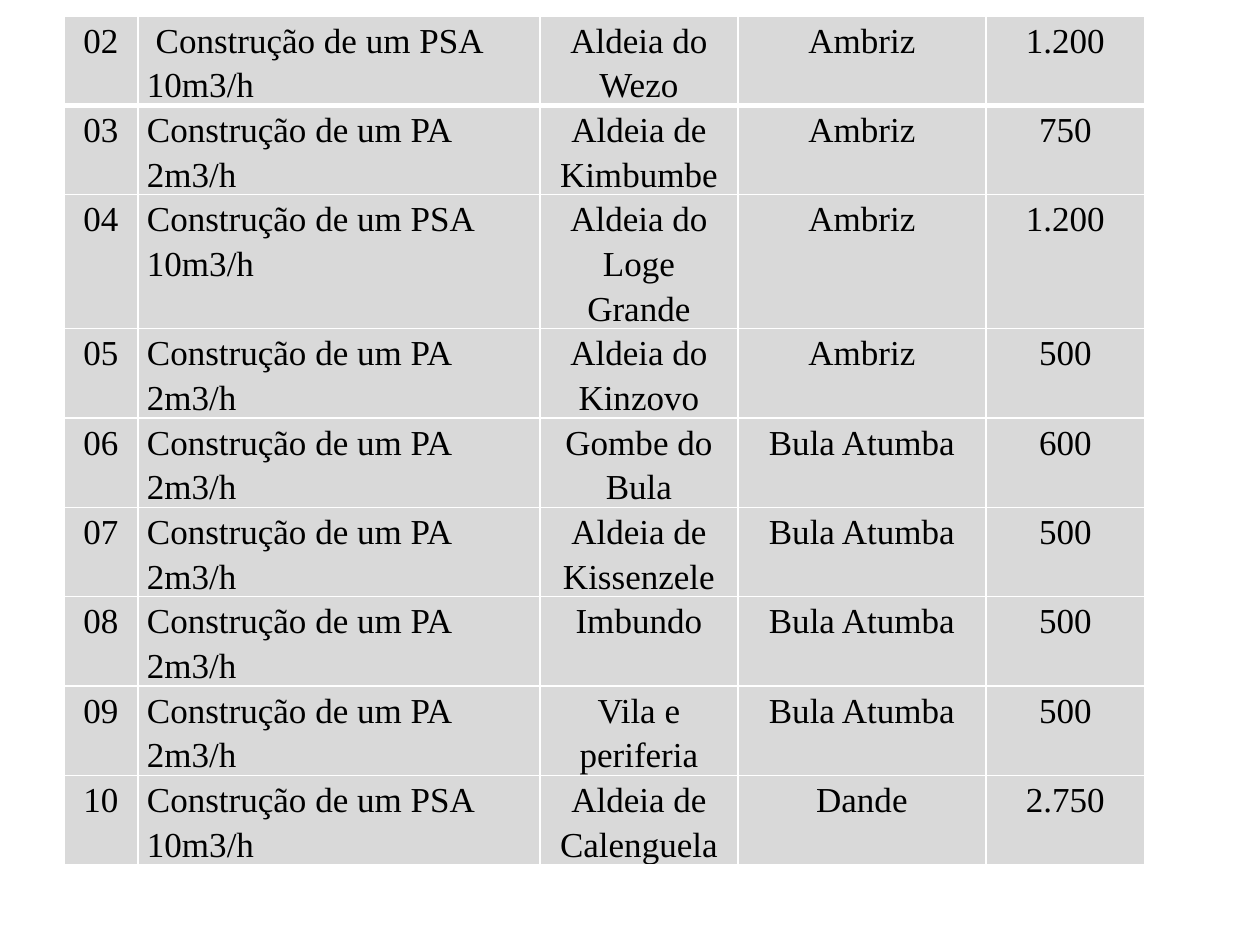
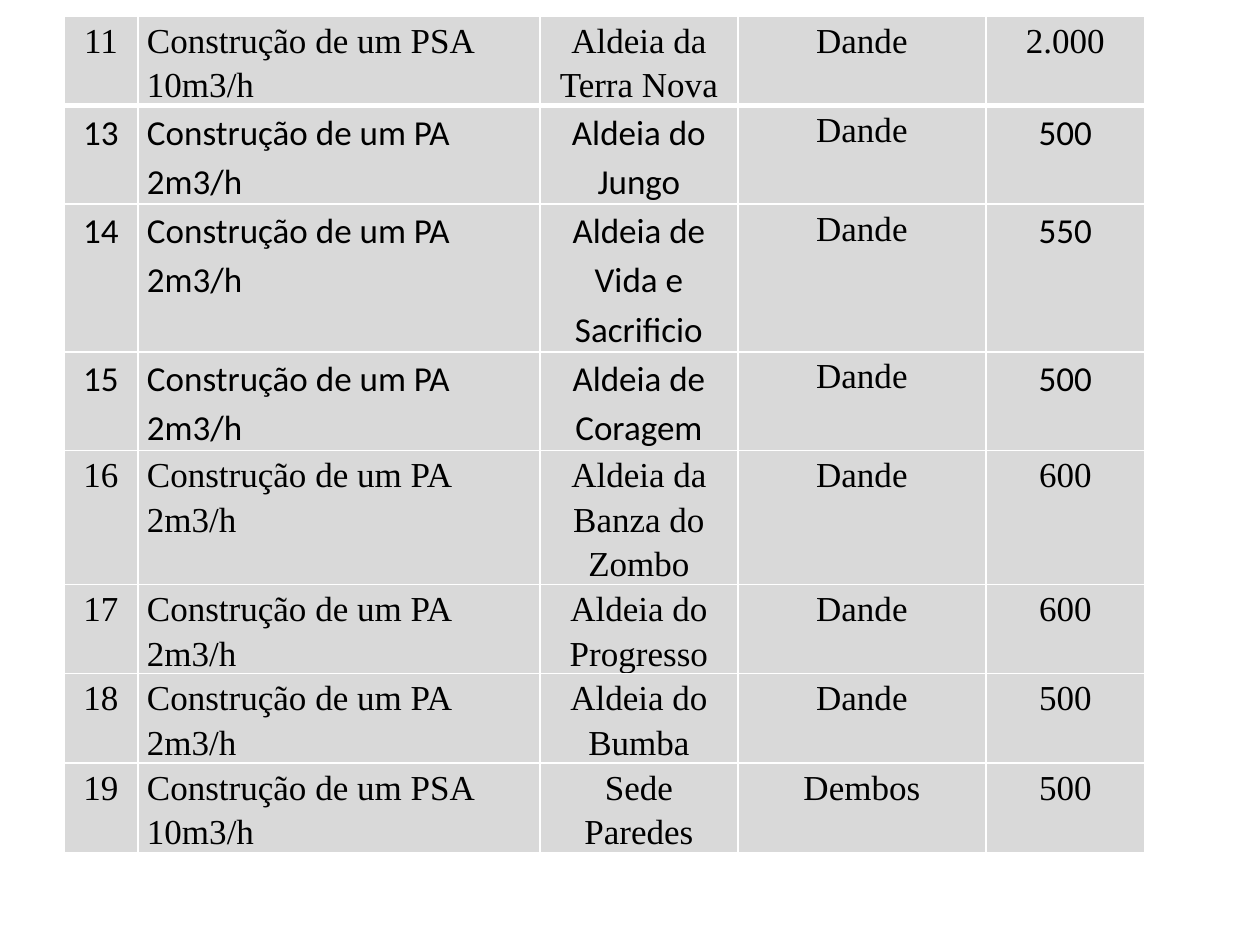
"""Build two slides listing water supply works by village and municipality."""
from dataclasses import dataclass

from lxml import etree
from pptx import Presentation
from pptx import util as u
from pptx.dml.color import RGBColor
from pptx.enum import text
from pptx.oxml import ns

PA = "Construção de um PA 2m3/h"
PSA = "Construção de um PSA 10m3/h"

WORKS_BY_SLIDE = [
    [
        ("02", " " + PSA, "Aldeia do Wezo", "Ambriz", "1.200"),
        ("03", PA, "Aldeia de Kimbumbe", "Ambriz", "750"),
        ("04", PSA, "Aldeia do Loge Grande", "Ambriz", "1.200"),
        ("05", PA, "Aldeia do Kinzovo", "Ambriz", "500"),
        ("06", PA, "Gombe do Bula", "Bula Atumba", "600"),
        ("07", PA, "Aldeia de Kissenzele", "Bula Atumba", "500"),
        ("08", PA, "Imbundo", "Bula Atumba", "500"),
        ("09", PA, "Vila e periferia", "Bula Atumba", "500"),
        ("10", PSA, "Aldeia de Calenguela", "Dande", "2.750"),
    ],
    [
        ("11", PSA, "Aldeia da Terra Nova", "Dande", "2.000"),
        ("13", PA, "Aldeia do Jungo", "Dande", "500"),
        ("14", PA, "Aldeia de Vida e Sacrificio", "Dande", "550"),
        ("15", PA, "Aldeia de Coragem", "Dande", "500"),
        ("16", PA, "Aldeia da Banza do Zombo", "Dande", "600"),
        ("17", PA, "Aldeia do Progresso", "Dande", "600"),
        ("18", PA, "Aldeia do Bumba", "Dande", "500"),
        ("19", PSA, "Sede Paredes", "Dembos", "500"),
    ],
]
SANS_WORKS = {"13", "14", "15"}
DESCRIPTION, MUNICIPALITY = 1, 3

PX = 914400 / 126
SLIDE_SIZE = (1260, 945)
TABLE_LEFT, TABLE_TOP = 64, 16
COLUMN_WIDTHS = (74, 402, 198, 248, 159)
ROW_HEIGHT = 52
SIDE_MARGIN = 9


@dataclass(frozen=True)
class Theme:
    ink: str = "000000"
    cell: str = "D9D9D9"
    rule: str = "FFFFFF"
    serif: str = "Times New Roman"
    sans: str = "Calibri"
    size: int = 20
    line_spacing: float = 1.15
    space_after: int = 10
    thin: int = 1
    thick: int = 3


THEME = Theme()


def px(length):
    return u.Emu(round(length * PX))


def draw_borders(cell, top, bottom):
    properties = cell._tc.get_or_add_tcPr()
    widths = {"lnL": THEME.thin, "lnR": THEME.thin, "lnT": top, "lnB": bottom}
    for position, (side, width) in enumerate(widths.items()):
        line = etree.Element(ns.qn(f"a:{side}"), w=str(u.Pt(width)))
        fill = etree.SubElement(line, ns.qn("a:solidFill"))
        etree.SubElement(fill, ns.qn("a:srgbClr"), val=THEME.rule)
        properties.insert(position, line)


def fill_cell(cell, wording, column, font_name):
    cell.margin_left = cell.margin_right = px(SIDE_MARGIN)
    cell.margin_top = cell.margin_bottom = 0
    cell.fill.solid()
    cell.fill.fore_color.rgb = RGBColor.from_string(THEME.cell)
    cell.text_frame.text = wording
    paragraph = cell.text_frame.paragraphs[0]
    paragraph.line_spacing = THEME.line_spacing
    centred = column != DESCRIPTION
    paragraph.alignment = text.PP_ALIGN.CENTER if centred else text.PP_ALIGN.LEFT
    if column == MUNICIPALITY:
        paragraph.space_after = u.Pt(THEME.space_after)
    font = paragraph.runs[0].font
    font.name = font_name
    font.size = u.Pt(THEME.size)
    font.color.rgb = RGBColor.from_string(THEME.ink)


def add_works_table(slide, works):
    table = slide.shapes.add_table(
        len(works), len(COLUMN_WIDTHS), px(TABLE_LEFT), px(TABLE_TOP),
        px(sum(COLUMN_WIDTHS)), px(ROW_HEIGHT * len(works)),
    ).table
    table.first_row = table.horz_banding = False
    for column, width in zip(table.columns, COLUMN_WIDTHS):
        column.width = px(width)
    for row, work in enumerate(works):
        top = THEME.thick if row == 1 else THEME.thin
        bottom = THEME.thick if row == 0 else THEME.thin
        for column, wording in enumerate(work):
            sans = work[0] in SANS_WORKS and column != MUNICIPALITY
            cell = table.cell(row, column)
            fill_cell(cell, wording, column, THEME.sans if sans else THEME.serif)
            draw_borders(cell, top, bottom)


def main():
    deck = Presentation()
    deck.slide_width, deck.slide_height = map(px, SLIDE_SIZE)
    blank = deck.slide_layouts[6]
    for works in WORKS_BY_SLIDE:
        add_works_table(deck.slides.add_slide(blank), works)
    deck.save("out.pptx")


if __name__ == "__main__":
    main()
